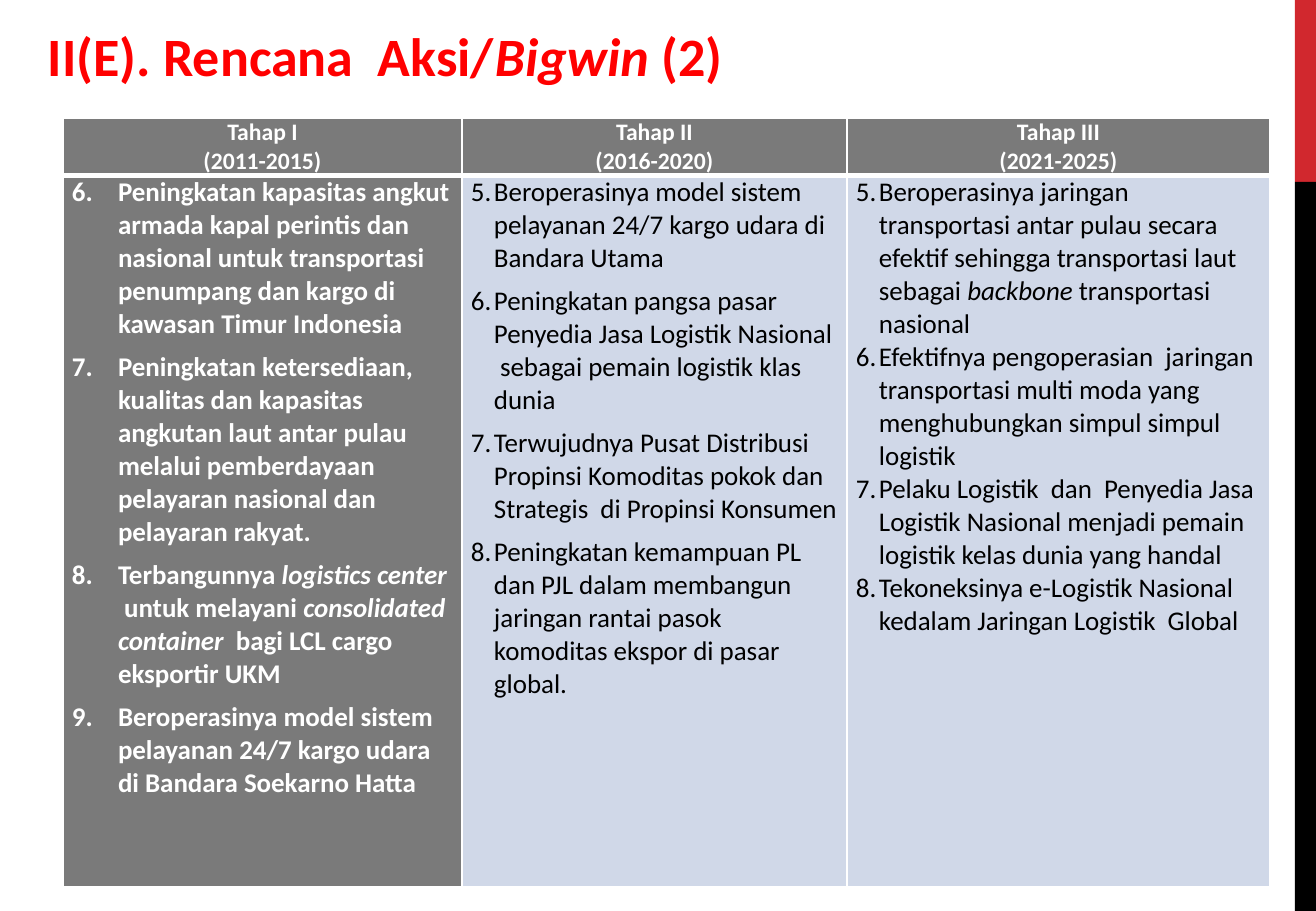
"""Build the slide with the three-stage logistics action plan."""
import lxml.etree
import pptx
import pptx.dml.color
import pptx.enum.shapes
import pptx.enum.text
import pptx.oxml
import pptx.oxml.ns
import pptx.util

RED = pptx.dml.color.RGBColor(0xFF, 0x00, 0x00)
CRIMSON = pptx.dml.color.RGBColor(0xD1, 0x28, 0x2E)
BLACK = pptx.dml.color.RGBColor(0x00, 0x00, 0x00)
WHITE = pptx.dml.color.RGBColor(0xFF, 0xFF, 0xFF)
GRAY = pptx.dml.color.RGBColor(0x7A, 0x7A, 0x7A)
PALE_BLUE = pptx.dml.color.RGBColor(0xD0, 0xD8, 0xE8)

FONT = "Calibri"
SLIDE_SIZE = (1316, 911)
SIDE_BARS = [((1295, 0, 21, 182), CRIMSON), ((1295, 182, 21, 729), BLACK)]
TITLE_BOX = (36, 16, 1219, 77)
TITLE = "II(E). Rencana  Aksi/*Bigwin *(2)"
TABLE_ORIGIN = (63, 118)
ROW_HEIGHTS = (57, 711)

STAGES = [
    {
        "heading": ["Tahap I", "(2011-2015)"],
        "width": 399, "fill": GRAY, "color": WHITE, "bold": True,
        "start": 6, "indent": 46, "space_after": 6,
        "items": [
            "Peningkatan kapasitas angkut armada kapal perintis dan nasional untuk "
            "transportasi penumpang dan kargo di kawasan Timur Indonesia",
            "Peningkatan ketersediaan, kualitas dan kapasitas angkutan laut antar pulau "
            "melalui pemberdayaan pelayaran nasional dan pelayaran rakyat.",
            "Terbangunnya *logistics center * untuk melayani *consolidated container*"
            "  bagi LCL cargo eksportir UKM",
            "Beroperasinya model sistem pelayanan 24/7 kargo udara  di Bandara Soekarno Hatta",
        ],
    },
    {
        "heading": ["Tahap II", "(2016-2020)"],
        "width": 385, "fill": PALE_BLUE, "color": BLACK, "bold": False,
        "start": 5, "indent": 23, "space_after": 6,
        "items": [
            "Beroperasinya model sistem pelayanan 24/7 kargo udara di Bandara Utama",
            "Peningkatan pangsa pasar Penyedia Jasa Logistik Nasional  sebagai pemain "
            "logistik klas dunia",
            "Terwujudnya Pusat Distribusi Propinsi Komoditas pokok dan Strategis  di "
            "Propinsi Konsumen",
            "Peningkatan kemampuan PL dan PJL dalam membangun jaringan rantai pasok "
            "komoditas ekspor di pasar global.",
        ],
    },
    {
        "heading": ["Tahap III", "(2021-2025)"],
        "width": 423, "fill": PALE_BLUE, "color": BLACK, "bold": False,
        "start": 5, "indent": 23, "space_after": 0,
        "items": [
            "Beroperasinya jaringan transportasi antar pulau secara efektif sehingga "
            "transportasi laut sebagai *backbone* transportasi nasional",
            "Efektifnya pengoperasian  jaringan transportasi multi moda yang "
            "menghubungkan simpul simpul logistik",
            "Pelaku Logistik  dan  Penyedia Jasa Logistik Nasional menjadi pemain "
            "logistik kelas dunia yang handal",
            "Tekoneksinya e-Logistik Nasional kedalam Jaringan Logistik  Global",
        ],
    },
]


def px(length):
    """Convert pixels to EMU."""
    return pptx.util.Emu(round(length * 914400 / 121.5))


def add_xml(parent, tag, **attributes):
    """Append a DrawingML child element."""
    child = lxml.etree.SubElement(parent, pptx.oxml.ns.qn(tag))
    for name, value in attributes.items():
        child.set(name, str(value))
    return child


def write_text(frame, lines, *, size, color, bold=True, align=None,
               space_after=0, start=None, indent=0):
    """Write one paragraph per line; asterisks enclose italics."""
    for index, line in enumerate(lines):
        paragraph = frame.paragraphs[0] if index == 0 else frame.add_paragraph()
        paragraph.alignment = align
        paragraph.space_after = pptx.util.Pt(space_after)
        if start is not None:
            properties = paragraph._p.get_or_add_pPr()
            properties.set("marL", str(px(indent)))
            properties.set("indent", str(-px(indent)))
            add_xml(properties, "a:buFont", typeface="+mj-lt")
            add_xml(properties, "a:buAutoNum", type="arabicPeriod", startAt=start)
        for part, text in enumerate(line.split("*")):
            if text:
                run = paragraph.add_run()
                run.text = text
                run.font.name = FONT
                run.font.size = pptx.util.Pt(size)
                run.font.bold = bold
                run.font.italic = part % 2 == 1
                run.font.color.rgb = color


def style_cell(cell, fill, side_margin, top_border, bottom_border):
    """Set margins, white borders and fill of a cell."""
    cell.margin_left = cell.margin_right = px(side_margin)
    cell.margin_top = cell.margin_bottom = 0
    properties = cell._tc.get_or_add_tcPr()
    borders = {"a:lnL": 1, "a:lnR": 1, "a:lnT": top_border, "a:lnB": bottom_border}
    for tag, width in borders.items():
        line = add_xml(properties, tag, w=pptx.util.Pt(width))
        add_xml(add_xml(line, "a:solidFill"), "a:srgbClr", val=WHITE)
    cell.fill.solid()
    cell.fill.fore_color.rgb = fill


def add_side_bars(slide):
    """Draw the two bars at the right edge."""
    for box, color in SIDE_BARS:
        shape = slide.shapes.add_shape(
            pptx.enum.shapes.MSO_SHAPE.RECTANGLE, *map(px, box))
        shape.shadow.inherit = False
        shape.fill.solid()
        shape.fill.fore_color.rgb = color
        shape.line.fill.background()


def add_stage_table(slide):
    """Add the table with one column per stage."""
    width = sum(stage["width"] for stage in STAGES)
    table = slide.shapes.add_table(
        len(ROW_HEIGHTS), len(STAGES), *map(px, TABLE_ORIGIN),
        px(width), px(sum(ROW_HEIGHTS))).table
    table.horz_banding = False
    for row, height in zip(table.rows, ROW_HEIGHTS):
        row.height = px(height)
    for index, stage in enumerate(STAGES):
        table.columns[index].width = px(stage["width"])
        header, body = table.cell(0, index), table.cell(1, index)
        style_cell(header, GRAY, 1, 1, 3)
        write_text(header.text_frame, stage["heading"], size=14, color=WHITE,
                   align=pptx.enum.text.PP_ALIGN.CENTER)
        style_cell(body, stage["fill"], 9, 3, 1)
        write_text(body.text_frame, stage["items"], size=16, color=stage["color"],
                   bold=stage["bold"], space_after=stage["space_after"],
                   start=stage["start"], indent=stage["indent"])


def main():
    """Build and save the presentation."""
    presentation = pptx.Presentation()
    presentation.slide_width, presentation.slide_height = map(px, SLIDE_SIZE)
    slide = presentation.slides.add_slide(presentation.slide_layouts[6])
    add_side_bars(slide)
    add_stage_table(slide)
    title = slide.shapes.add_textbox(*map(px, TITLE_BOX)).text_frame
    title.word_wrap = True
    title.vertical_anchor = pptx.enum.text.MSO_ANCHOR.BOTTOM
    write_text(title, [TITLE], size=32, color=RED)
    presentation.save("out.pptx")


if __name__ == "__main__":
    main()
